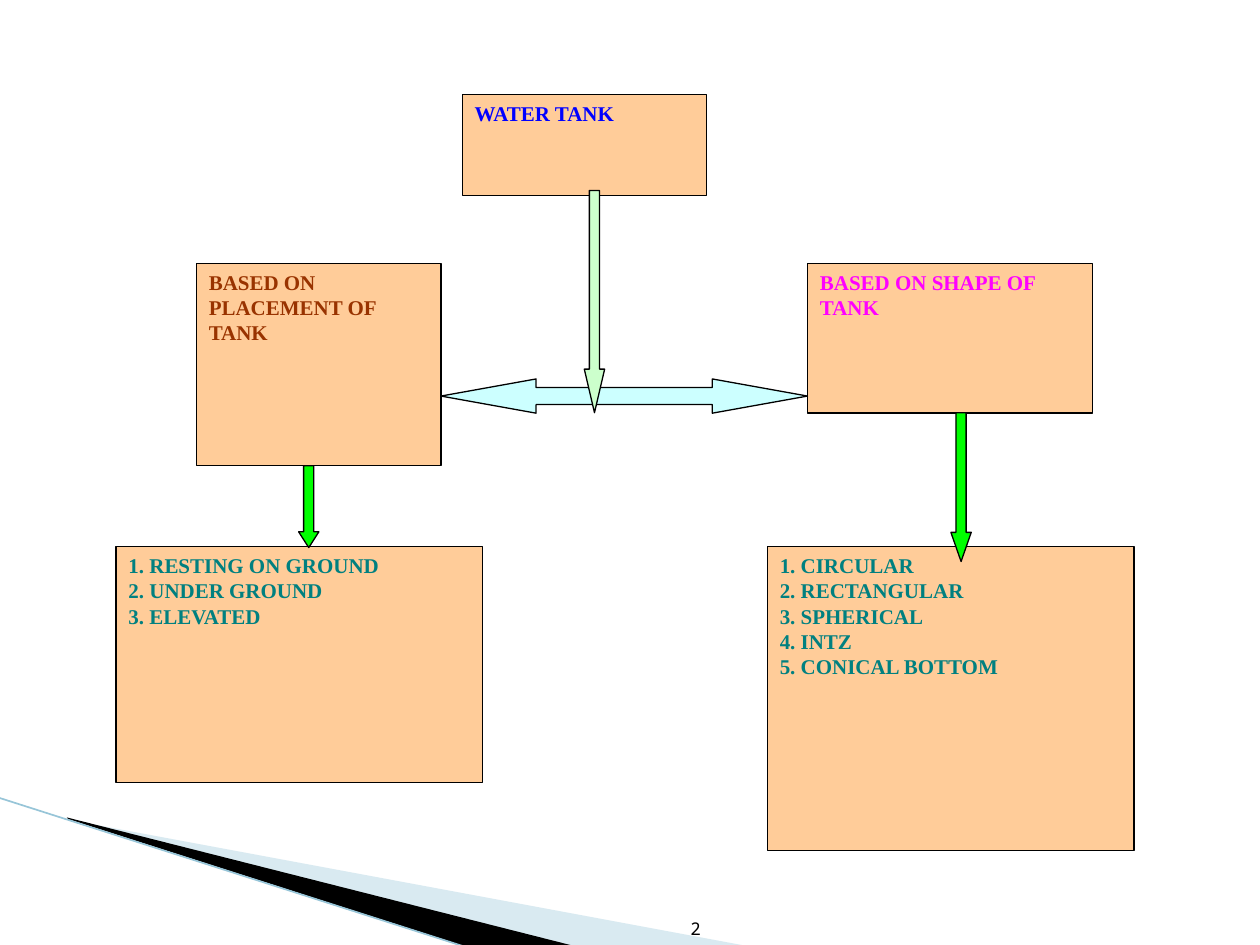
from lxml.etree import SubElement
from pptx import Presentation
from pptx.dml.color import RGBColor
from pptx.enum.shapes import MSO_CONNECTOR, MSO_SHAPE
from pptx.enum.text import MSO_ANCHOR, PP_ALIGN
from pptx.oxml.ns import qn
from pptx.util import Cm, Pt


def rgb(color):
    return RGBColor.from_string(color)


class TankSlide:
    """Holds the diagram style and the slide being drawn."""

    font_name = "Times New Roman"
    box_fill = "FFCC99"
    outline = "000000"

    def __init__(self, slide):
        self.shapes = slide.shapes

    def paint(self, shape, fill, outlined=True):
        shape.shadow.inherit = False
        shape.fill.solid()
        shape.fill.fore_color.rgb = rgb(fill)
        if outlined:
            shape.line.color.rgb = rgb(self.outline)
            shape.line.width = Pt(0.75)
        else:
            shape.line.fill.background()

    def set_text(self, frame, text, color, size, font_name, bold, align):
        frame.word_wrap = True
        frame.text = text
        for paragraph in frame.paragraphs:
            paragraph.alignment = align
            for run in paragraph.runs:
                run.font.name = font_name
                run.font.size = Pt(size)
                run.font.bold = bold
                run.font.color.rgb = rgb(color)

    def box(self, text, color, *bounds):
        box = self.shapes.add_shape(MSO_SHAPE.RECTANGLE, *map(Cm, bounds))
        self.paint(box, self.box_fill)
        box.text_frame.vertical_anchor = MSO_ANCHOR.TOP
        self.set_text(box.text_frame, text, color, 12, self.font_name, True, PP_ALIGN.LEFT)

    def arrow(self, preset, head, fill, *bounds):
        arrow = self.shapes.add_shape(preset, *map(Cm, bounds))
        arrow.adjustments[0] = 0.5
        arrow.adjustments[1] = head
        self.paint(arrow, fill)

    def wedge(self, points, fill, opacity=100):
        corners = [(Cm(x), Cm(y)) for x, y in points]
        builder = self.shapes.build_freeform(*corners[0])
        builder.add_line_segments(corners[1:], close=True)
        wedge = builder.convert_to_shape()
        self.paint(wedge, fill, outlined=False)
        if opacity < 100:
            color = wedge._element.spPr.find(qn("a:solidFill"))[0]
            SubElement(color, qn("a:alpha")).set("val", str(opacity * 1000))

    def edge(self, color, width, *ends):
        edge = self.shapes.add_connector(MSO_CONNECTOR.STRAIGHT, *map(Cm, ends))
        edge.line.color.rgb = rgb(color)
        edge.line.width = Pt(width)
        SubElement(edge._element.spPr, qn("a:effectLst"))

    def page_number(self, number, *bounds):
        frame = self.shapes.add_textbox(*map(Cm, bounds)).text_frame
        frame.vertical_anchor = MSO_ANCHOR.BOTTOM
        self.set_text(frame, number, "000000", 10, "Noto Sans Mono", False, PP_ALIGN.RIGHT)


def main():
    presentation = Presentation()
    presentation.slide_width, presentation.slide_height = Cm(25.4), Cm(19.05)
    tanks = TankSlide(presentation.slides.add_slide(presentation.slide_layouts[6]))

    tanks.wedge([(1.4, 16.53), (15.11, 19.08), (11.58, 19.08), (1.4, 16.51)], "A0CBDC", 40)
    tanks.wedge([(1.35, 16.48), (11.61, 19.08), (9.45, 19.1), (1.37, 16.51)], "000000")
    tanks.edge("97C5D8", 0.95, -0.03, 16.08, 9.42, 19.1)
    tanks.page_number("2", 8.46, 17.73, 5.92, 1.32)

    placements = ["RESTING ON GROUND", "UNDER GROUND", "ELEVATED"]
    forms = ["CIRCULAR", "RECTANGULAR", "SPHERICAL", "INTZ", "CONICAL BOTTOM"]
    category_top, list_top, list_width = 5.31, 11.02, 7.39
    tanks.box("WATER TANK", "0000FF", 9.32, 1.91, 4.93, 2.03)
    tanks.box("BASED ON PLACEMENT OF TANK", "993300", 3.96, category_top, 4.93, 4.08)
    tanks.box("BASED ON SHAPE OF TANK", "FF00FF", 16.28, category_top, 5.74, 3.02)
    for kinds, left, height in [(placements, 2.34, 4.75), (forms, 15.47, 6.12)]:
        numbered = "\n".join(f"{i}. {kind}" for i, kind in enumerate(kinds, 1))
        tanks.box(numbered, "008080", left, list_top, list_width, height)

    tanks.arrow(MSO_SHAPE.LEFT_RIGHT_ARROW, 2.78, "CCFFFF", 8.89, 7.64, 7.39, 0.69)
    for head, fill, left, top, height in [
        (0.78, "00FF00", 6.02, 9.39, 1.65),
        (1.43, "00FF00", 19.17, 8.32, 3),
        (2.14, "CCFFCC", 11.78, 3.84, 4.48),
    ]:
        tanks.arrow(MSO_SHAPE.DOWN_ARROW, head, fill, left, top, 0.41, height)

    presentation.save("out.pptx")


if __name__ == "__main__":
    main()
